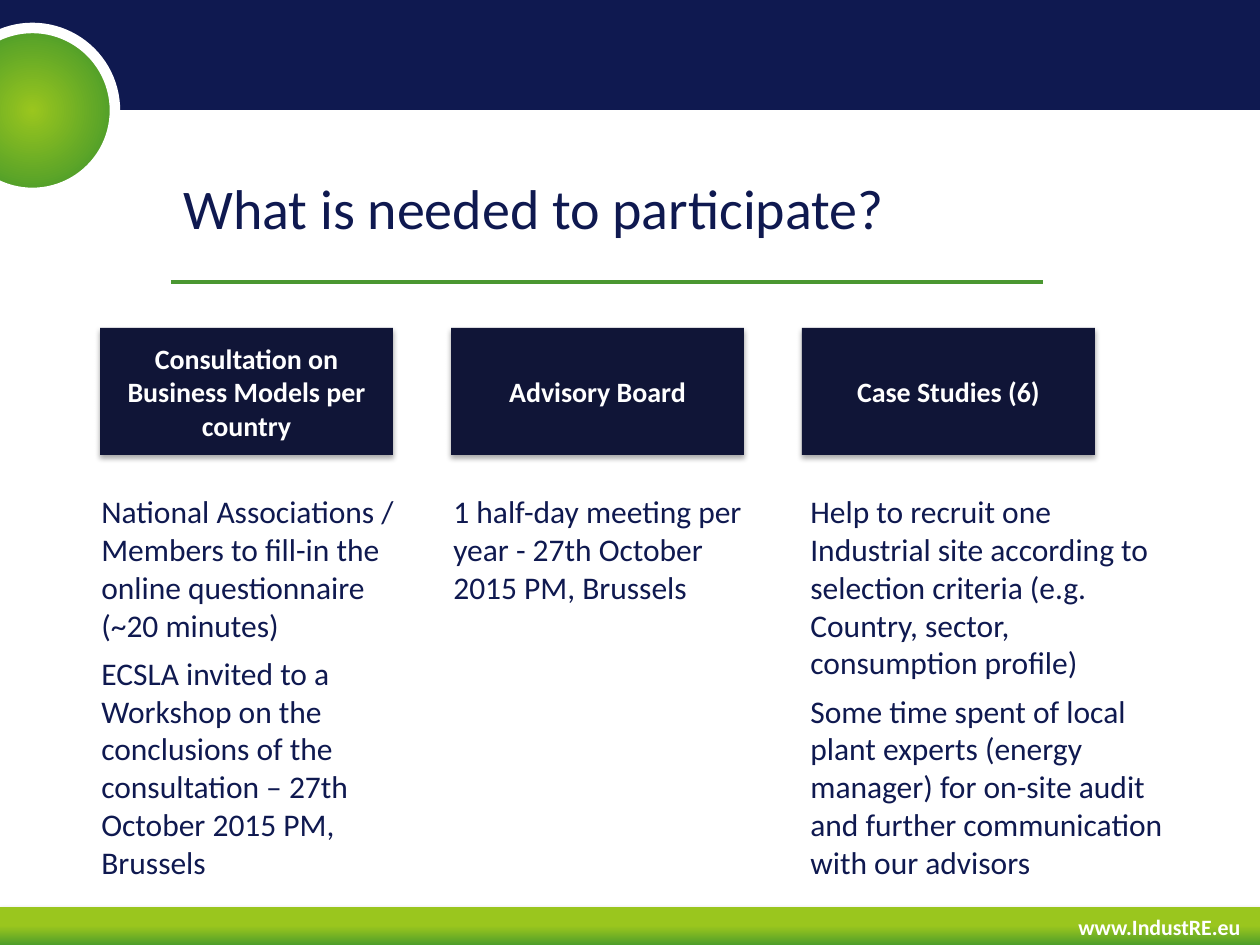
from lxml.etree import SubElement
from pptx import Presentation
from pptx.dml.color import RGBColor
from pptx.enum.shapes import MSO_CONNECTOR, MSO_SHAPE
from pptx.enum.text import MSO_ANCHOR, PP_ALIGN
from pptx.oxml.ns import qn
from pptx.util import Emu, Pt

NAVY = RGBColor(0x0F, 0x19, 0x50)
DARK_NAVY = RGBColor(0x10, 0x15, 0x37)
LIME = RGBColor(0x9A, 0xC6, 0x1E)
GREEN = RGBColor(0x4F, 0x9E, 0x2A)
RULE_GREEN = RGBColor(0x4A, 0x97, 0x31)
WHITE = RGBColor(0xFF, 0xFF, 0xFF)

WIDTH, HEIGHT = 1260, 945
CARD_STEP = 351

TITLE = {"size": Pt(32), "bold": False}
BODY = {"size": Pt(18), "bold": False}
CARD = {"size": Pt(16), "bold": True}
FOOTER = {"size": Pt(12.5), "bold": True}

COLUMNS = [
    ("Consultation on Business Models per country", (89, 343, 404), [
        "National Associations / Members to fill-in the online questionnaire (~20 minutes)",
        "ECSLA invited to a Workshop on the conclusions of the consultation – "
        "27th October 2015 PM, Brussels"]),
    ("Advisory Board", (441, 343, 127), [
        "1 half-day meeting per year - 27th October 2015 PM, Brussels"]),
    ("Case Studies (6)", (798, 391, 404), [
        "Help to recruit one Industrial site according to selection criteria "
        "(e.g. Country, sector, consumption profile)",
        "Some time spent of local plant experts (energy manager) for on-site audit "
        "and further communication with our advisors"]),
]


def px(n):
    return Emu(round(n * 914400 / 126))


def write(s, lines, font, color, align=PP_ALIGN.LEFT, **frame):
    tf = s.text_frame
    for name, value in {"word_wrap": True, **frame}.items():
        setattr(tf, name, value)
    for i, line in enumerate(lines):
        p = tf.paragraphs[0] if i == 0 else tf.add_paragraph()
        p.alignment = align
        if i:
            p.space_before = Pt(6)
        r = p.add_run()
        r.text = line
        for name, value in {"name": "Calibri", **font}.items():
            setattr(r.font, name, value)
        r.font.color.rgb = color


def add_text(slide, box, *args, **frame):
    write(slide.shapes.add_textbox(*map(px, box)), *args, **frame)


def add_block(slide, box, color=None, kind=MSO_SHAPE.RECTANGLE):
    s = slide.shapes.add_shape(kind, *map(px, box))
    s.shadow.inherit = False
    s.line.fill.background()
    if color is not None:
        s.fill.solid()
        s.fill.fore_color.rgb = color
    return s


def add_shadow(s):
    effects = s._element.spPr.find(qn("a:effectLst"))
    shadow = SubElement(effects, qn("a:outerShdw"), blurRad=str(Pt(3.1)),
                        dist=str(Pt(1.8)), dir="5400000", rotWithShape="0")
    color = SubElement(shadow, qn("a:srgbClr"), val="000000")
    SubElement(color, qn("a:alpha"), val="35000")


def fill_gradient(s, start, end):
    s.fill.gradient()
    s.fill.gradient_angle = 270
    for stop, color, position in zip(s.fill.gradient_stops, (LIME, GREEN), (start, end)):
        stop.color.rgb = color
        stop.position = position


def make_radial(s):
    grad = s._element.spPr.find(qn("a:gradFill"))
    grad.remove(grad.find(qn("a:lin")))
    circle = SubElement(grad, qn("a:path"), path="circle")
    SubElement(circle, qn("a:fillToRect"), l="50000", t="50000", r="50000", b="50000")


def add_footer(slide, x, y, w, h):
    bar = add_block(slide, (x, y, w, h))
    fill_gradient(bar, 0.5, 1)
    add_shadow(bar)
    add_text(slide, (x + 1017, y, 285, h), ["www.IndustRE.eu"], FOOTER, WHITE,
             PP_ALIGN.CENTER)


def add_banner(slide, x, y, w, h):
    add_block(slide, (x, y, w, h), NAVY)
    disc = add_block(slide, (x - 50, y + 28, 165, 165), kind=MSO_SHAPE.OVAL)
    fill_gradient(disc, 0, 0.72)
    make_radial(disc)
    disc.line.color.rgb = WHITE
    disc.line.width = Pt(6)


def add_title(slide, x, y, w, h):
    rule = slide.shapes.add_connector(
        MSO_CONNECTOR.STRAIGHT, px(x), px(y + 112), px(x + 872), px(y + 112))
    rule.line.color.rgb = RULE_GREEN
    rule.line.width = Pt(2)
    SubElement(rule._element.spPr, qn("a:effectLst"))
    add_text(slide, (x, y, w, h), ["What is needed to participate?"], TITLE, NAVY,
             vertical_anchor=MSO_ANCHOR.MIDDLE)


def add_columns(slide, x, y, w, h):
    for i, (heading, (left, width, height), lines) in enumerate(COLUMNS):
        card = add_block(slide, (x + i * CARD_STEP, y, w, h), DARK_NAVY)
        add_shadow(card)
        write(card, [heading], CARD, WHITE, PP_ALIGN.CENTER,
              vertical_anchor=MSO_ANCHOR.MIDDLE, margin_left=px(5),
              margin_right=px(5), margin_top=0, margin_bottom=0)
        add_text(slide, (left, y + 158, width, height), lines, BODY, NAVY)


def main():
    prs = Presentation()
    prs.slide_width, prs.slide_height = px(WIDTH), px(HEIGHT)
    slide = prs.slides.add_slide(prs.slide_layouts[6])
    add_footer(slide, 0, 907, WIDTH, 38)
    add_banner(slide, 0, 0, WIDTH, 110)
    add_title(slide, 171, 170, 1043, 74)
    add_columns(slide, 100, 328, 293, 127)
    prs.save("out.pptx")


if __name__ == "__main__":
    main()
